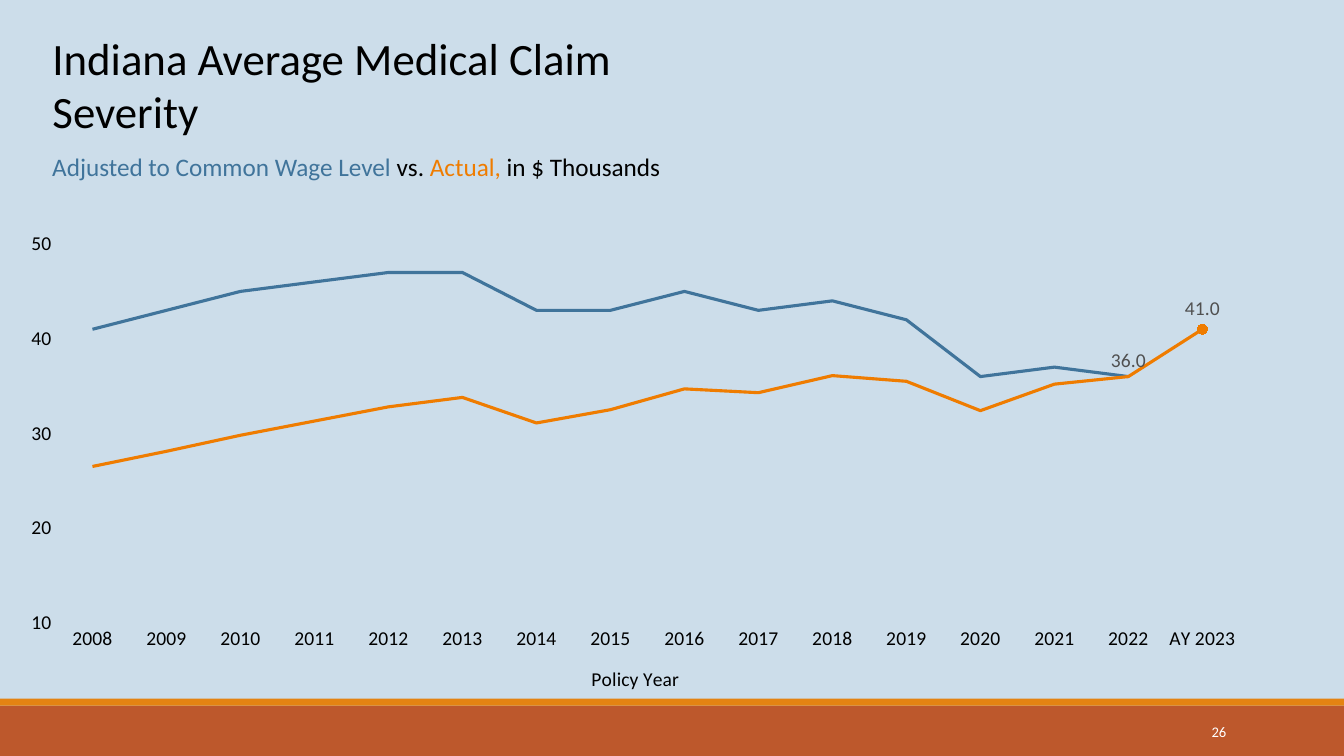
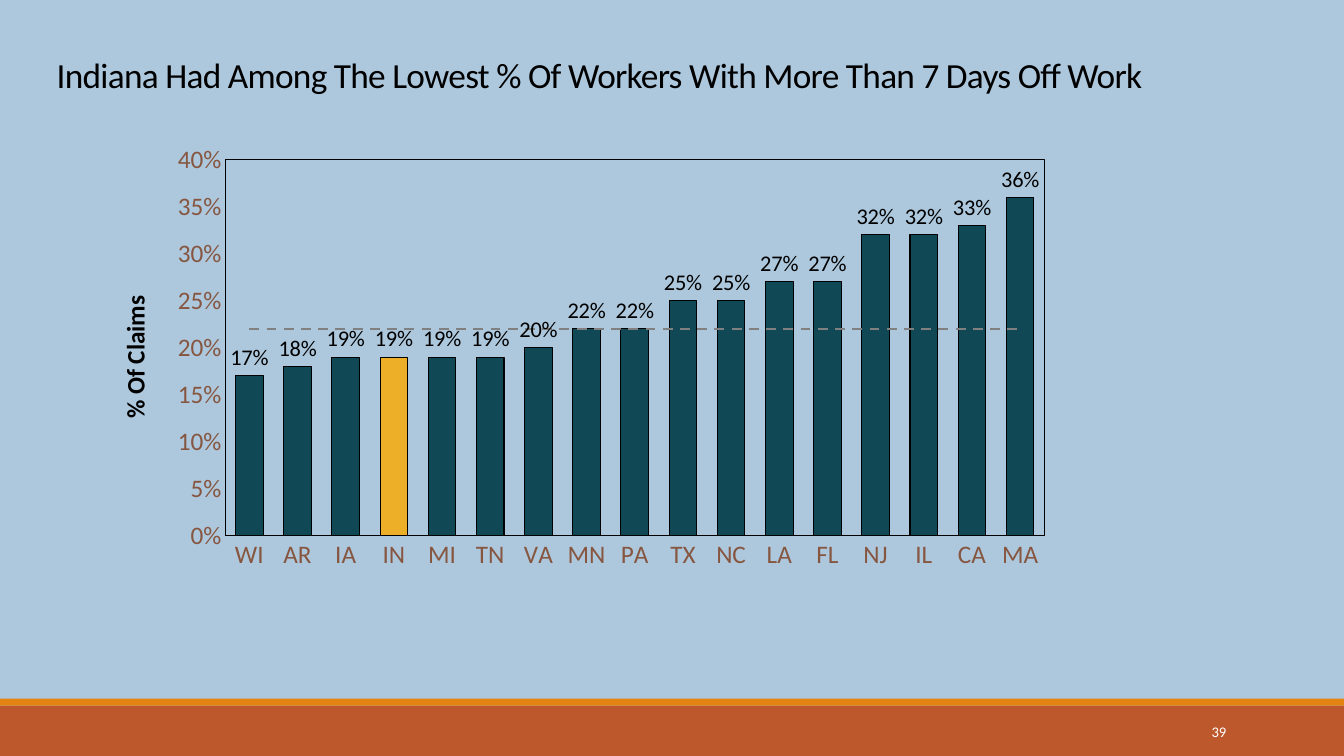
"""Build two slides of workers compensation charts with a shared footer band."""
from pptx import Presentation
from pptx.chart.data import CategoryChartData
from pptx.dml.color import RGBColor
from pptx.enum.chart import XL_CHART_TYPE, XL_LABEL_POSITION, XL_MARKER_STYLE, XL_TICK_MARK
from pptx.enum.dml import MSO_LINE
from pptx.enum.shapes import MSO_SHAPE
from pptx.enum.text import MSO_ANCHOR, MSO_AUTO_SIZE, PP_ALIGN
from pptx.oxml import parse_xml
from pptx.oxml.ns import nsdecls, qn
from pptx.util import Inches, Pt

FACE = "Calibri"
BLACK = RGBColor(0x00, 0x00, 0x00)
WHITE = RGBColor(0xFF, 0xFF, 0xFF)
RUST = RGBColor(0xBD, 0x58, 0x2C)
AMBER = RGBColor(0xE4, 0x83, 0x12)
PALE = RGBColor(0xCC, 0xDD, 0xEA)
SKY = RGBColor(0xAD, 0xC8, 0xDD)
BLUE = RGBColor(0x40, 0x74, 0x9B)
ORANGE = RGBColor(0xEF, 0x7C, 0x00)
BROWN = RGBColor(0x86, 0x56, 0x40)
TEAL = RGBColor(0x11, 0x48, 0x55)
GOLD = RGBColor(0xEE, 0xAF, 0x28)
GREY = RGBColor(0x80, 0x80, 0x80)
SLATE = RGBColor(0x50, 0x50, 0x50)

deck = Presentation()
deck.slide_width, deck.slide_height = Inches(13.33), Inches(7.5)


def box(left, top, width, height):
    """Turn percentages of the slide into lengths."""
    wide, high = deck.slide_width / 100, deck.slide_height / 100
    return int(left * wide), int(top * high), int(width * wide), int(height * high)


def draw(slide, kind, data, place, inner, size, edge):
    """Add a clear chart with a fixed plot area and plain axes."""
    chart = slide.shapes.add_chart(kind, *box(*place), data).chart
    chart.has_title = chart.has_legend = False
    area = chart._chartSpace.chart.plotArea
    old = area.find(qn("c:layout"))
    if old is not None:
        area.remove(old)
    spots = "".join(f'<c:{tag} val="{val}"/>' for tag, val in zip("xywh", inner))
    area.insert(0, parse_xml(
        f'<c:layout {nsdecls("c")}><c:manualLayout><c:layoutTarget val="inner"/>'
        f'<c:xMode val="edge"/><c:yMode val="edge"/>{spots}</c:manualLayout></c:layout>'))
    clear = f'<c:spPr {nsdecls("c", "a")}><a:noFill/><a:ln w="9525">%s</a:ln></c:spPr>'
    area.append(parse_xml(clear % edge))
    chart._chartSpace.chart.addnext(parse_xml(clear % "<a:noFill/>"))
    chart.font.name, chart.font.size, chart.font.bold = FACE, Pt(size), False
    for axis in (chart.category_axis, chart.value_axis):
        axis.has_major_gridlines = False
        axis.major_tick_mark = axis.minor_tick_mark = XL_TICK_MARK.NONE
        axis.tick_labels.font.size = Pt(size)
    return chart


pages = [
    (26, PALE, "Indiana Average Medical Claim Severity",
     (3.15, 3.33, 52.59, 15.5), 32, PP_ALIGN.LEFT, MSO_ANCHOR.TOP, 1, 0),
    (39, SKY, "Indiana Had Among The Lowest % Of Workers With More Than 7 Days Off Work",
     (0, 7.07, 89.2, 6.27), 25.2, PP_ALIGN.CENTER, MSO_ANCHOR.BOTTOM, 0.85, -50),
]
for number, back, words, place, size, align, anchor, space, track in pages:
    slide = deck.slides.add_slide(deck.slide_layouts[5])
    slide.background.fill.solid()
    slide.background.fill.fore_color.rgb = back
    for color, top, height in ((RUST, 93.33, 6.67), (AMBER, 92.4, 0.93)):
        band = slide.shapes.add_shape(MSO_SHAPE.RECTANGLE, *box(0, top, 100, height))
        band.shadow.inherit = False
        band.fill.solid()
        band.fill.fore_color.rgb = color
        band.line.fill.background()
    foot = slide.shapes.add_textbox(*box(81.25, 94.13, 10.73, 5.33)).text_frame
    foot.word_wrap, foot.vertical_anchor = True, MSO_ANCHOR.MIDDLE
    foot.text = str(number)
    line = foot.paragraphs[0]
    line.alignment = PP_ALIGN.RIGHT
    line.font.name, line.font.size, line.font.color.rgb = FACE, Pt(10.5), WHITE
    title = slide.shapes.title
    title.left, title.top, title.width, title.height = box(*place)
    frame = title.text_frame
    frame.text = words
    frame.word_wrap, frame.auto_size = True, MSO_AUTO_SIZE.NONE
    frame.vertical_anchor = anchor
    line = frame.paragraphs[0]
    line.alignment, line.line_spacing = align, space
    line.font.name, line.font.size, line.font.color.rgb = FACE, Pt(size), BLACK
    line.runs[0]._r.get_or_add_rPr().set("spc", str(track))

first, second = deck.slides

note = first.shapes.add_textbox(*box(3.15, 19.4, 52.59, 5.5)).text_frame
note.word_wrap = True
line = note.paragraphs[0]
line.font.name, line.font.size = FACE, Pt(18)
for words, color in (("Adjusted to Common Wage Level ", BLUE), ("vs. ", BLACK),
                     ("Actual,", ORANGE), (" in $ Thousands", BLACK)):
    run = line.add_run()
    run.text, run.font.color.rgb = words, color

data = CategoryChartData()
data.categories = [str(year) for year in range(2008, 2023)] + ["AY 2023"]
data.add_series("Adjusted", [41, 43, 45, 46, 47, 47, 43, 43, 45, 43, 44, 42, 36, 37, 36, None])
data.add_series("Actual", [26.5, 28.1, 29.8, 31.3, 32.8, 33.8, 31.1, 32.5,
                           34.7, 34.3, 36.1, 35.5, 32.4, 35.2, 36, 41], "#,##0.0")
chart = draw(first, XL_CHART_TYPE.LINE, data, (2.33, 23.87, 90.25, 69.07),
             (0.016, 0.122, 0.98, 0.725), 14, "<a:noFill/>")
for axis in (chart.category_axis, chart.value_axis):
    axis.tick_labels.font.color.rgb = BLACK
    axis.format.line.fill.background()
axis = chart.value_axis
axis.minimum_scale, axis.maximum_scale, axis.major_unit = 10, 50, 10
axis.tick_labels.number_format = "#,##0"
axis.tick_labels.number_format_is_linked = False
head = chart.category_axis.axis_title.text_frame
head.text = "Policy Year"
font = head.paragraphs[0].font
font.name, font.size, font.bold, font.color.rgb = FACE, Pt(14), False, BLACK
for trend, color in zip(chart.series, (BLUE, ORANGE)):
    trend.smooth = False
    trend.marker.style = XL_MARKER_STYLE.NONE
    trend.format.line.color.rgb, trend.format.line.width = color, Pt(2.25)
actual = chart.series[1]
labels = actual.data_labels
labels.show_value = False
labels.number_format, labels.number_format_is_linked = "#,##0.0", False
for spot in (14, 15):
    label = actual.points[spot].data_label
    label.font.size, label.font.color.rgb = Pt(14), SLATE
    label.position = XL_LABEL_POSITION.ABOVE
last = actual.points[15]
last.format.line.color.rgb, last.format.line.width = ORANGE, Pt(2.25)
last.marker.style, last.marker.size = XL_MARKER_STYLE.CIRCLE, 7
last.marker.format.fill.solid()
last.marker.format.fill.fore_color.rgb = BROWN
last.marker.format.line.color.rgb = BROWN

data = CategoryChartData(number_format="0%")
data.categories = "WI AR IA IN MI TN VA MN PA TX NC LA FL NJ IL CA MA".split()
data.add_series("Claims", [0.17, 0.18, 0.19, 0.19, 0.19, 0.19, 0.2, 0.22, 0.22,
                           0.25, 0.25, 0.27, 0.27, 0.32, 0.32, 0.33, 0.36])
data.add_series("Median", [0.22] * 17)
chart = draw(second, XL_CHART_TYPE.COLUMN_CLUSTERED, data, (7.5, 18.8, 71.27, 63.33),
             (0.13, 0.037, 0.855, 0.785), 18,
             '<a:solidFill><a:srgbClr val="000000"/></a:solidFill>')
for axis in (chart.category_axis, chart.value_axis):
    axis.tick_labels.font.color.rgb = BROWN
    axis.format.line.color.rgb, axis.format.line.width = BLACK, Pt(0.75)
axis = chart.value_axis
axis.minimum_scale, axis.maximum_scale, axis.major_unit = 0, 0.4, 0.05
axis.tick_labels.number_format = "0%"
axis.tick_labels.number_format_is_linked = False
head = axis.axis_title.text_frame
head.text = "% Of Claims"
font = head.paragraphs[0].font
font.name, font.size, font.bold, font.color.rgb = FACE, Pt(18), True, BLACK

plot = chart.plots[0]
plot.gap_width, plot.vary_by_categories = 75, False
claims, median = plot.series
for part, color in ((claims, TEAL), (claims.points[3], GOLD)):
    part.format.fill.solid()
    part.format.fill.fore_color.rgb = color
    part.format.line.color.rgb, part.format.line.width = BLACK, Pt(0.75)
labels = claims.data_labels
labels.show_value, labels.position = True, XL_LABEL_POSITION.OUTSIDE_END
labels.number_format, labels.number_format_is_linked = "0%", False
labels.font.size, labels.font.color.rgb = Pt(16), BLACK

bars, dash = plot._element, median._element
for flag in dash.findall(qn("c:invertIfNegative")):
    dash.remove(flag)
lines = parse_xml(f'<c:lineChart {nsdecls("c")}><c:grouping val="standard"/>'
                  '<c:varyColors val="0"/><c:marker val="1"/></c:lineChart>')
lines.insert(2, dash)
for mark in bars.findall(qn("c:axId")):
    lines.append(parse_xml(f'<c:axId {nsdecls("c")} val="{mark.get("val")}"/>'))
bars.addnext(lines)
median = chart.plots[1].series[0]
median.smooth, median.marker.style = False, XL_MARKER_STYLE.NONE
pen = median.format.line
pen.color.rgb, pen.width, pen.dash_style = GREY, Pt(1.75), MSO_LINE.DASH

deck.save("out.pptx")
